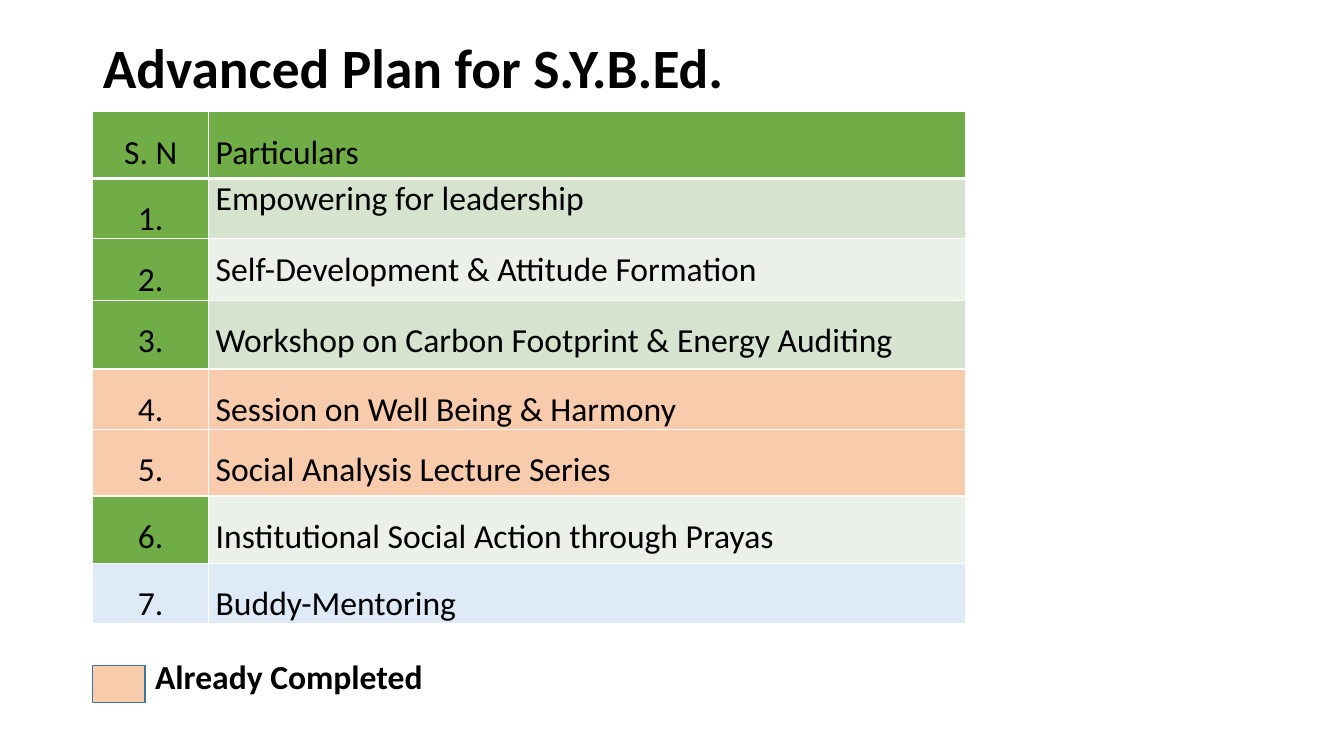
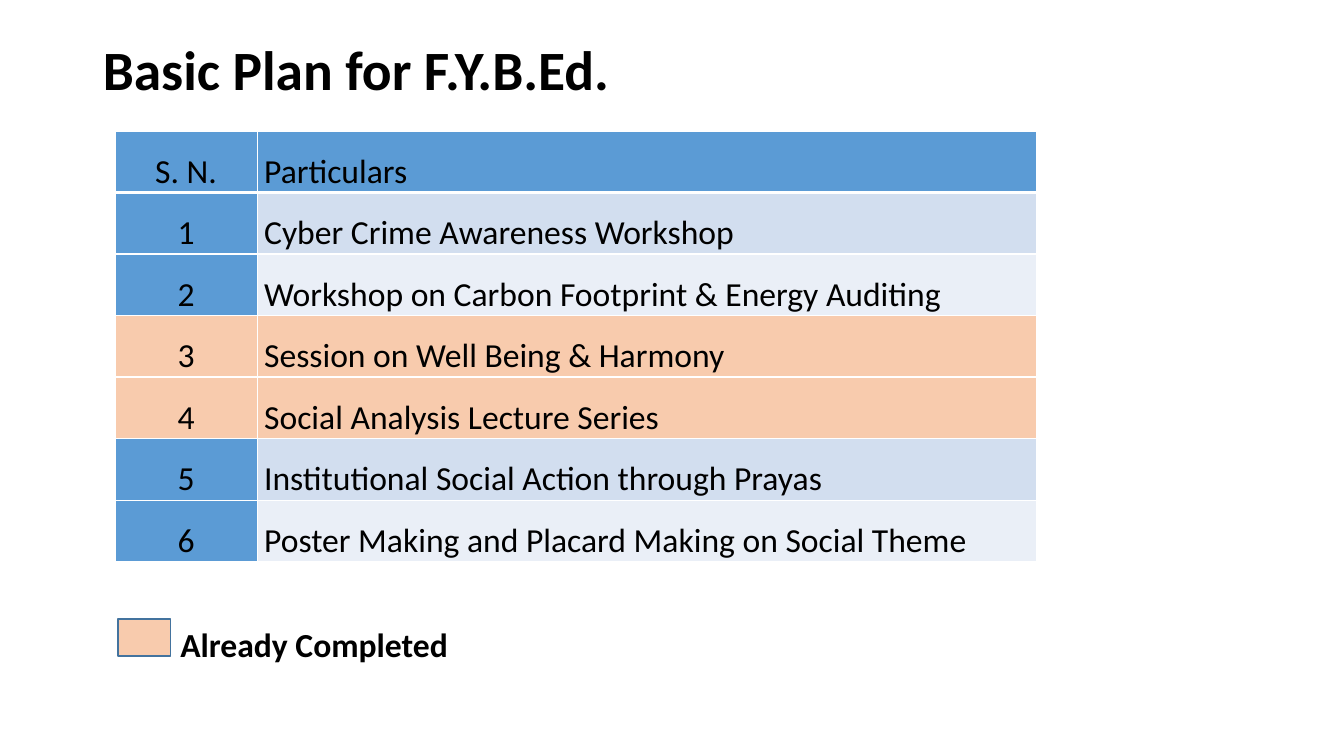
import pptx
import pptx.util
from lxml import etree
from pptx.dml.color import RGBColor
from pptx.enum.shapes import MSO_SHAPE
from pptx.enum.text import MSO_ANCHOR, MSO_AUTO_SIZE, PP_ALIGN
from pptx.oxml.ns import qn
from pptx.util import Inches, Pt

FONT = "Calibri"
TITLE_SIZE = Pt(39.6)
TEXT_SIZE = Pt(24)
BLACK = RGBColor(0x00, 0x00, 0x00)
WHITE = RGBColor(0xFF, 0xFF, 0xFF)
GREEN = RGBColor(0x70, 0xAD, 0x47)
GREEN_BANDS = (RGBColor(0xD5, 0xE3, 0xCF), RGBColor(0xEB, 0xF1, 0xE9))
BLUE = RGBColor(0x5B, 0x9B, 0xD5)
BLUE_BANDS = (RGBColor(0xD2, 0xDE, 0xEF), RGBColor(0xEA, 0xEF, 0xF7))
PALE_BLUE = RGBColor(0xDE, 0xEB, 0xF7)
COMPLETED = RGBColor(0xF8, 0xCB, 0xAD)
SWATCH_EDGE = RGBColor(0x43, 0x73, 0x9E)

ADVANCED_PLAN = [
    "Empowering for leadership",
    "Self-Development & Attitude Formation",
    "Workshop on Carbon Footprint & Energy Auditing",
    "Session on Well Being & Harmony",
    "Social Analysis Lecture Series",
    "Institutional Social Action through Prayas",
    "Buddy-Mentoring",
]
BASIC_PLAN = [
    "Cyber Crime Awareness Workshop",
    "Workshop on Carbon Footprint & Energy Auditing",
    "Session on Well Being & Harmony",
    "Social Analysis Lecture Series",
    "Institutional Social Action through Prayas",
    "Poster Making and Placard Making on Social Theme",
]


def add_run(paragraph, text, size=TEXT_SIZE, bold=False):
    run = paragraph.add_run()
    run.text = text
    run.font.name = FONT
    run.font.size = size
    run.font.bold = bold
    run.font.color.rgb = BLACK


def add_titled_slide(deck, title, height):
    slide = deck.slides.add_slide(deck.slide_layouts[5])
    heading = slide.shapes.title
    heading.left, heading.top = Inches(0.92), Inches(0.4)
    heading.width, heading.height = Inches(11.5), Inches(height)
    frame = heading.text_frame
    frame.auto_size = MSO_AUTO_SIZE.NONE
    frame.vertical_anchor = MSO_ANCHOR.MIDDLE
    paragraph = frame.paragraphs[0]
    paragraph.alignment = PP_ALIGN.LEFT
    paragraph.line_spacing = 0.9
    add_run(paragraph, title, TITLE_SIZE, bold=True)
    return slide


def set_borders(cell, top, bottom):
    """Draw white cell borders; top and bottom are widths in points."""
    properties = cell._tc.get_or_add_tcPr()
    for side, width in (("L", 1), ("R", 1), ("T", top), ("B", bottom)):
        line = etree.SubElement(properties, qn(f"a:ln{side}"), w=str(Pt(width)))
        fill = etree.SubElement(line, qn("a:solidFill"))
        etree.SubElement(fill, qn("a:srgbClr"), val=str(WHITE))


def fill_cell(cell, text, color, row, centred, line_spacing=1.5):
    set_borders(cell, top=3 if row == 1 else 1, bottom=3 if row == 0 else 1)
    cell.fill.solid()
    cell.fill.fore_color.rgb = color
    cell.margin_left = cell.margin_right = Inches(0.07)
    cell.margin_top = cell.margin_bottom = 0
    paragraph = cell.text_frame.paragraphs[0]
    paragraph.alignment = PP_ALIGN.CENTER if centred else PP_ALIGN.LEFT
    paragraph.line_spacing = line_spacing
    add_run(paragraph, text)


def add_plan_table(slide, left, top, column_widths, row_heights, number_heading,
                   number_format, activities, accent, bands, row_colors, single_spaced=()):
    """Add a numbered plan; row_colors overrides the banding of whole rows."""
    plan = slide.shapes.add_table(
        len(row_heights), 2, Inches(left), Inches(top),
        Inches(sum(column_widths)), Inches(sum(row_heights))).table
    for column, width in zip(plan.columns, column_widths):
        column.width = Inches(width)
    for row, height in zip(plan.rows, row_heights):
        row.height = Inches(height)

    fill_cell(plan.cell(0, 0), number_heading, accent, 0, centred=True)
    fill_cell(plan.cell(0, 1), "Particulars", accent, 0, centred=False)
    for number, activity in enumerate(activities, start=1):
        number_color = row_colors.get(number, accent)
        activity_color = row_colors.get(number, bands[(number - 1) % 2])
        spacing = 1.0 if number in single_spaced else 1.5
        fill_cell(plan.cell(number, 0), number_format.format(number), number_color,
                  number, centred=True)
        fill_cell(plan.cell(number, 1), activity, activity_color,
                  number, centred=False, line_spacing=spacing)
    return plan


def add_completed_legend(slide, left, swatch_top, label_top):
    swatch = slide.shapes.add_shape(
        MSO_SHAPE.RECTANGLE, Inches(left), Inches(swatch_top), Inches(0.52), Inches(0.37))
    swatch.shadow.inherit = False
    swatch.fill.solid()
    swatch.fill.fore_color.rgb = COMPLETED
    swatch.line.color.rgb = SWATCH_EDGE
    swatch.line.width = Pt(1)

    label = slide.shapes.add_textbox(
        Inches(left + 0.52), Inches(label_top), Inches(3.28), Inches(0.5))
    label.text_frame.word_wrap = True
    label.text_frame.auto_size = MSO_AUTO_SIZE.SHAPE_TO_FIT_TEXT
    add_run(label.text_frame.paragraphs[0], "Already Completed", bold=True)


def add_advanced_plan(deck):
    slide = add_titled_slide(deck, "Advanced Plan for S.Y.B.Ed.", height=0.59)
    add_completed_legend(slide, left=0.92, swatch_top=6.6, label_top=6.46)
    plan = add_plan_table(
        slide, 0.92, 1.11, (1.15, 7.51),
        (0.66, 0.56, 0.61, 0.68, 0.56, 0.66, 0.67, 0.56),
        "S. N", "{}.", ADVANCED_PLAN, GREEN, GREEN_BANDS,
        row_colors={4: COMPLETED, 5: COMPLETED, 7: PALE_BLUE}, single_spaced=(1, 2))
    plan.cell(2, 1).vertical_anchor = MSO_ANCHOR.MIDDLE


def add_basic_plan(deck):
    slide = add_titled_slide(deck, "Basic Plan for F.Y.B.Ed.", height=0.64)
    add_plan_table(
        slide, 1.14, 1.3, (1.41, 7.73), [0.61] * (len(BASIC_PLAN) + 1),
        "S. N.", "{}", BASIC_PLAN, BLUE, BLUE_BANDS,
        row_colors={3: COMPLETED, 4: COMPLETED})
    add_completed_legend(slide, left=1.17, swatch_top=6.14, label_top=6.14)


def main():
    deck = pptx.Presentation()
    deck.slide_width, deck.slide_height = Inches(13.33), Inches(7.5)
    add_advanced_plan(deck)
    add_basic_plan(deck)
    deck.save("out.pptx")


if __name__ == "__main__":
    main()
